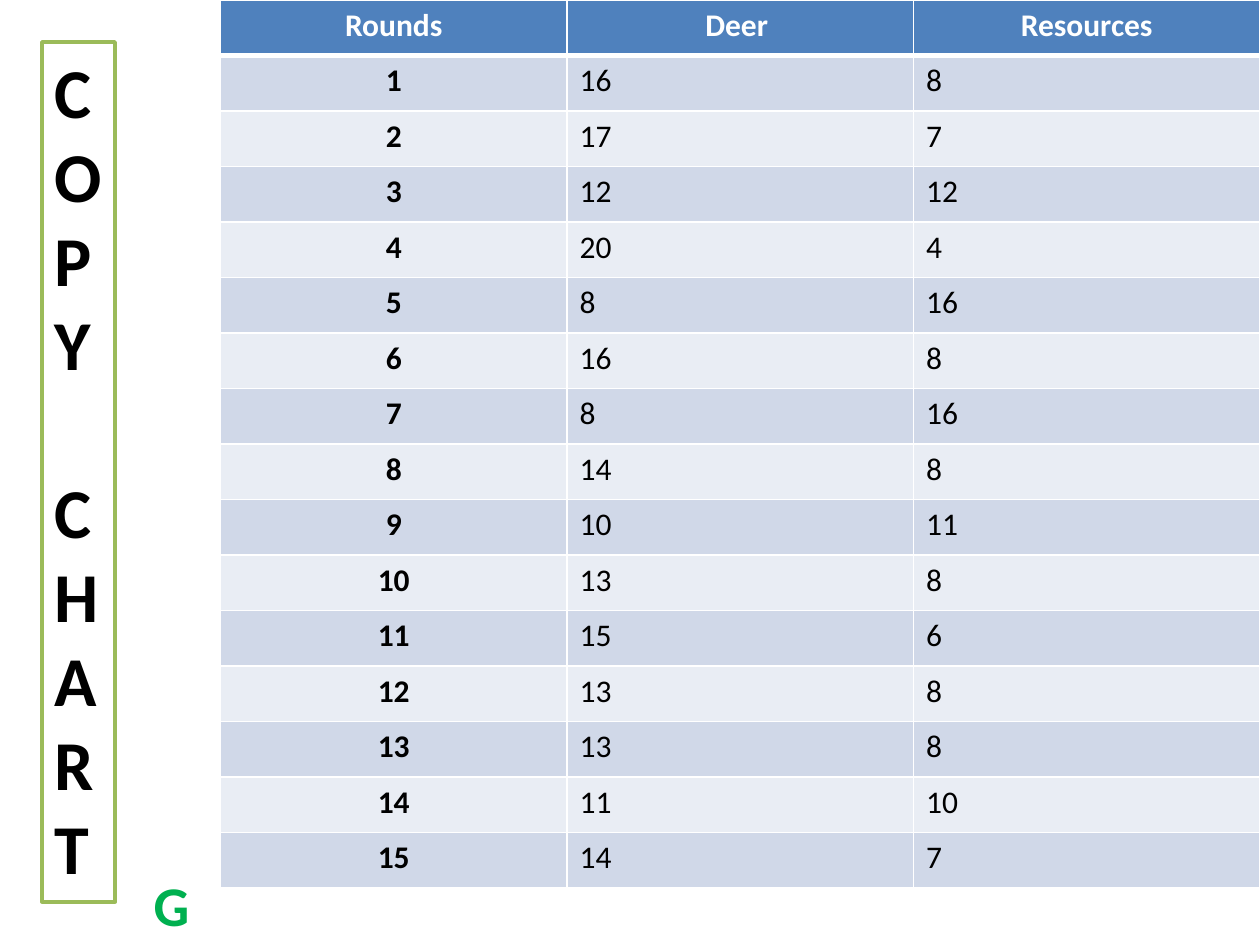
from lxml import etree
from pptx import Presentation
from pptx import util as u
from pptx.dml.color import RGBColor
from pptx.enum import shapes, text
from pptx.oxml import ns

WIDTH, HEIGHT = u.Inches(10), u.Inches(7.5)
FONT = "Calibri"
HEADINGS = ("Rounds", "Deer ", "Resources")
DEER = (16, 17, 12, 20, 8, 16, 8, 14, 10, 13, 15, 13, 13, 11, 14)
RESOURCES = (8, 7, 12, 4, 16, 8, 16, 8, 11, 8, 6, 8, 8, 10, 7)


def color(value):
    return RGBColor.from_string(value)


def share(left, top, width, height):
    return (int(left * WIDTH), int(top * HEIGHT),
            int(width * WIDTH), int(height * HEIGHT))


def style(paragraph, size, ink, bold=True, align=text.PP_ALIGN.LEFT):
    paragraph.alignment = align
    font = paragraph.font
    font.name, font.size, font.bold = FONT, u.Pt(size), bold
    font.color.rgb = color(ink)


def add_borders(cell, bottom):
    properties = cell._tc.get_or_add_tcPr()
    sides = {"lnL": 1, "lnR": 1, "lnT": 1, "lnB": bottom}
    for position, (side, points) in enumerate(sides.items()):
        border = etree.Element(ns.qn(f"a:{side}"), w=str(u.Pt(points)))
        fill = etree.SubElement(border, ns.qn("a:solidFill"))
        etree.SubElement(fill, ns.qn("a:srgbClr"), val="FFFFFF")
        properties.insert(position, border)


def add_population_table(slide, box):
    rounds = range(1, len(DEER) + 1)
    records = [HEADINGS, *zip(rounds, DEER, RESOURCES)]
    table = slide.shapes.add_table(len(records), len(HEADINGS), *box).table
    for row, record in enumerate(records):
        header = row == 0
        band = "4F81BD" if header else ("E9EDF4", "D0D8E8")[row % 2]
        for column, value in enumerate(record):
            cell = table.cell(row, column)
            cell.text = str(value)
            cell.fill.solid()
            cell.fill.fore_color.rgb = color(band)
            add_borders(cell, 3 if header else 1)
            strong = header or column == 0
            style(cell.text_frame.paragraphs[0], 18,
                  "FFFFFF" if header else "000000", strong,
                  text.PP_ALIGN.CENTER if strong else text.PP_ALIGN.LEFT)


def add_vertical_title(slide, box, words):
    banner = slide.shapes.add_shape(shapes.MSO_SHAPE.RECTANGLE, *box)
    banner.shadow.inherit = False
    banner.fill.solid()
    banner.fill.fore_color.rgb = color("FFFFFF")
    banner.line.color.rgb = color("9BBB59")
    banner.line.width = u.Pt(2)
    frame = banner.text_frame
    frame.word_wrap = False
    frame.vertical_anchor = text.MSO_ANCHOR.TOP
    frame.text = "\n".join("".join(words))
    for paragraph in frame.paragraphs:
        style(paragraph, 40, "000000")
    frame.paragraphs[len(words[0])].space_before = u.Pt(48)


def add_group_letter(slide, box, letter):
    frame = slide.shapes.add_textbox(*box).text_frame
    frame.word_wrap = True
    frame.text = letter
    style(frame.paragraphs[0], 32, "00B050", align=text.PP_ALIGN.CENTER)


def main():
    deck = Presentation()
    deck.slide_width, deck.slide_height = WIDTH, HEIGHT
    slide = deck.slides.add_slide(deck.slide_layouts[6])
    add_population_table(slide, share(0.175, 0, 0.825, 0.94))
    add_vertical_title(slide, share(1 / 30, 2 / 45, 0.058, 0.91),
                       ("COPY", "CHART"))
    add_group_letter(slide, share(0.092, 0.915, 0.088, 0.085), "G")
    deck.save("out.pptx")


if __name__ == "__main__":
    main()
